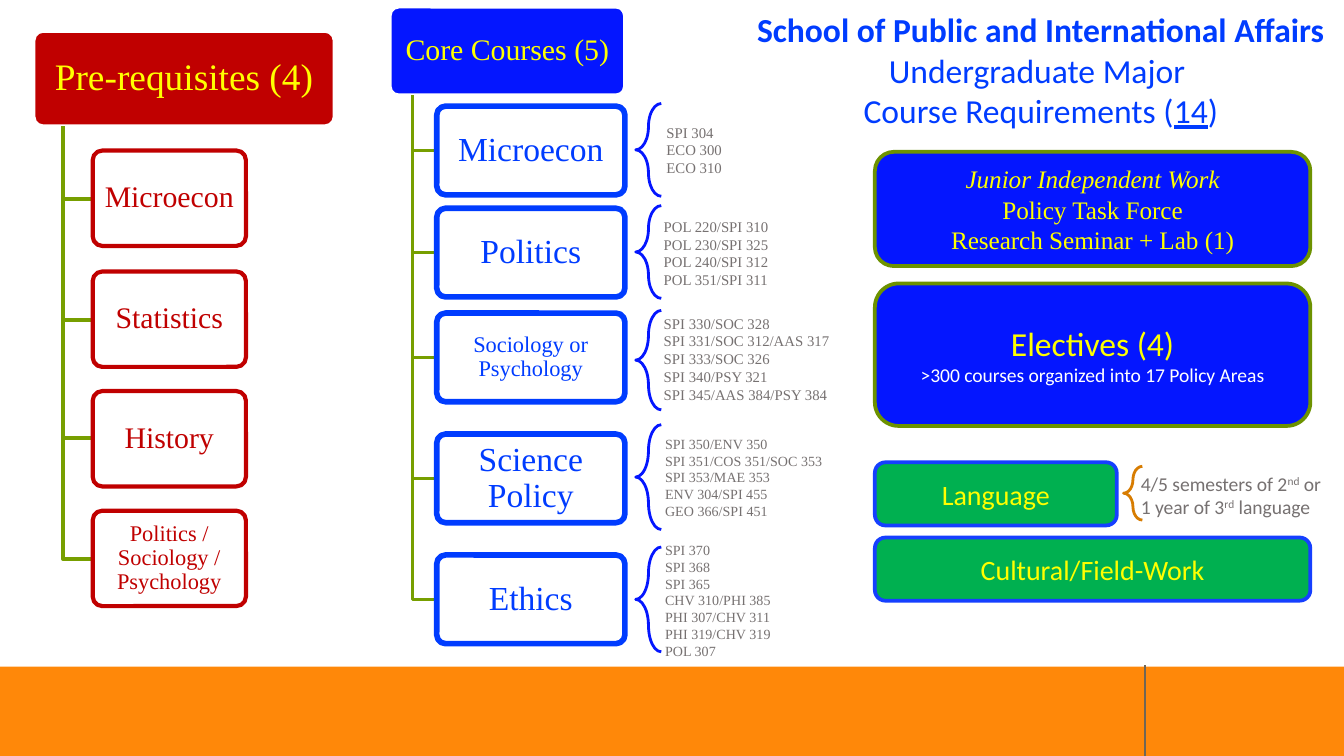
from dataclasses import dataclass
from typing import Optional, Sequence, Union

from pptx import Presentation
from pptx.dml.color import RGBColor
from pptx.enum.shapes import MSO_CONNECTOR, MSO_SHAPE
from pptx.enum.text import MSO_ANCHOR, PP_ALIGN
from pptx.oxml.ns import qn
from pptx.util import Pt
from lxml.etree import SubElement

PX = 9144  # 100 px to the inch
SLIDE_W = 1000 * PX
SLIDE_H = SLIDE_W * 9 // 16
SERIF, SANS = "Times New Roman", "Calibri"
WHITE = RGBColor(0xFF, 0xFF, 0xFF)
YELLOW = RGBColor(0xFF, 0xFF, 0x00)
RED = RGBColor(0xC0, 0x00, 0x00)
BLUE = RGBColor(0x04, 0x16, 0xFF)
COBALT = RGBColor(0x00, 0x3C, 0xFF)
EDGE_BLUE = RGBColor(0x15, 0x3F, 0xFF)
GREEN = RGBColor(0x00, 0xB0, 0x50)
OLIVE = RGBColor(0x6D, 0x92, 0x00)
BRANCH = RGBColor(0x77, 0x9F, 0x00)
GRAY = RGBColor(0x76, 0x71, 0x71)
ORANGE = RGBColor(0xFF, 0x88, 0x09)
AMBER = RGBColor(0xD7, 0x7C, 0x01)
DIVIDER = RGBColor(0x6F, 0x66, 0x57)


@dataclass(frozen=True)
class Box:
    x: int
    y: int
    w: int
    h: int

    def emu(self) -> tuple:
        return self.x * PX, self.y * PX, self.w * PX, self.h * PX


@dataclass(frozen=True)
class Run:
    text: str
    bold: bool = False
    italic: bool = False
    underline: bool = False
    superscript: bool = False
    size: Optional[float] = None
    color: Optional[RGBColor] = None


Line = Union[str, Run, Sequence[Run]]


@dataclass(frozen=True)
class Node:
    y: int
    text: str
    size: int


@dataclass(frozen=True)
class Tree:
    head: Box
    title: str
    title_size: int
    head_fill: RGBColor
    trunk_x: int
    trunk_y: int
    node_x: int
    node_w: int
    node_h: int
    color: RGBColor
    line_pt: float
    nodes: Sequence[Node]


@dataclass(frozen=True)
class CourseList:
    brace_y: int
    brace_h: int
    box: Box
    size: float
    codes: Sequence[str]


@dataclass(frozen=True)
class Panel:
    box: Box
    fill: RGBColor
    edge: RGBColor
    size: float
    font: str
    lines: Sequence[Line]


TREES = (
    Tree(Box(25, 23, 224, 71), "Pre-requisites (4)", 20, RED, 47, 94, 69, 114, 71, RED, 2.25,
         (Node(112, "Microecon", 16), Node(202, "Statistics", 16), Node(291, "History", 16),
          Node(380, "Politics / Sociology / Psychology", 12))),
    Tree(Box(290, 5, 175, 66), "Core Courses (5)", 16, BLUE, 307, 71, 325, 140, 66, COBALT, 3,
         (Node(79, "Microecon", 18), Node(155, "Politics", 18),
          Node(233, "Sociology or Psychology", 12), Node(323, "Science Policy", 18),
          Node(413, "Ethics", 18))),
)
COURSE_LISTS = (
    CourseList(77, 69, Box(486, 87, 62, 50), 7.9, ("SPI 304", "ECO 300", "ECO 310")),
    CourseList(153, 69, Box(484, 157, 100, 63), 7.9,
               ("POL 220/SPI 310", "POL 230/SPI 325", "POL 240/SPI 312", "POL 351/SPI 311")),
    CourseList(231, 74, Box(484, 229, 145, 76), 7.9,
               ("SPI 330/SOC 328", "SPI 331/SOC 312/AAS 317", "SPI 333/SOC 326",
                "SPI 340/PSY 321", "SPI 345/AAS 384/PSY 384")),
    CourseList(316, 78, Box(485, 319, 137, 73), 7.5,
               ("SPI 350/ENV 350", "SPI 351/COS 351/SOC 353", "SPI 353/MAE 353",
                "ENV 304/SPI 455", "GEO 366/SPI 451")),
    CourseList(407, 78, Box(485, 398, 99, 98), 7.5,
               ("SPI 370", "SPI 368", "SPI 365", "CHV 310/PHI 385", "PHI 307/CHV 311",
                "PHI 319/CHV 319", "POL 307")),
)
PANELS = (
    Panel(Box(651, 113, 324, 85), BLUE, OLIVE, 13.5, SERIF,
          (Run("Junior Independent Work", italic=True), "Policy Task Force",
           "Research Seminar + Lab (1)")),
    Panel(Box(651, 211, 324, 106), BLUE, OLIVE, 18, SANS,
          ("Electives (4)",
           Run(">300 courses organized into 17 Policy Areas", size=10.5, color=WHITE))),
    Panel(Box(651, 344, 180, 47), GREEN, EDGE_BLUE, 15, SANS, ("Language",)),
    Panel(Box(651, 400, 324, 47), GREEN, EDGE_BLUE, 15, SANS, ("Cultural/Field-Work",)),
)
TITLE = (Run("School of Public and International Affairs", bold=True),
         "Undergraduate Major ",
         (Run("Course Requirements ("), Run("14", underline=True), Run(")")))
LANGUAGE_NOTE = (
    (Run("4/5 semesters of 2"), Run("nd", superscript=True), Run(" or")),
    (Run("1 year of 3"), Run("rd", superscript=True), Run(" language")),
)


def write(sp, lines: Sequence[Line], *, size: float, color: RGBColor, font: str = SERIF,
          align=PP_ALIGN.CENTER, anchor=MSO_ANCHOR.MIDDLE, wrap: bool = True,
          spacing: Optional[float] = None, inset: Optional[int] = None) -> None:
    tf = sp.text_frame
    tf.word_wrap = wrap
    tf.vertical_anchor = anchor
    if inset is not None:
        tf.margin_left = tf.margin_right = tf.margin_top = tf.margin_bottom = inset * PX
    for i, line in enumerate(lines):
        p = tf.paragraphs[0] if i == 0 else tf.add_paragraph()
        p.alignment = align
        if spacing:
            p.line_spacing = spacing
        runs = [Run(line)] if isinstance(line, str) else [line] if isinstance(line, Run) else line
        for run in runs:
            r = p.add_run()
            r.text = run.text
            r.font.name = font
            r.font.size = Pt(run.size or size)
            r.font.color.rgb = run.color or color
            r.font.bold, r.font.italic, r.font.underline = run.bold, run.italic, run.underline
            if run.superscript:
                r._r.get_or_add_rPr().set("baseline", "30000")


def style(sp, fill: Optional[RGBColor], edge: Optional[RGBColor], line_pt: float = 2) -> None:
    sp.shadow.inherit = False
    if fill is None:
        sp.fill.background()
    else:
        sp.fill.solid()
        sp.fill.fore_color.rgb = fill
    if edge is None:
        sp.line.fill.background()
    else:
        sp.line.color.rgb = edge
        sp.line.width = Pt(line_pt)


def add_shape(s, kind, box: Box, fill, edge, line_pt: float = 2, adjust: Optional[float] = None):
    sp = s.shapes.add_shape(kind, *box.emu())
    style(sp, fill, edge, line_pt)
    if adjust is not None:
        sp.adjustments[0] = adjust
    return sp


def add_text(s, box: Box, lines: Sequence[Line], **fmt) -> None:
    write(s.shapes.add_textbox(*box.emu()), lines, anchor=MSO_ANCHOR.TOP, wrap=False, **fmt)


def add_brace(s, box: Box, color: RGBColor) -> None:
    add_shape(s, MSO_SHAPE.LEFT_BRACE, box, None, color, 1.5, 1.08)


def add_tree(s, t: Tree) -> None:
    sp = add_shape(s, MSO_SHAPE.ROUNDED_RECTANGLE, t.head, t.head_fill, WHITE, 2, 0.1)
    write(sp, [t.title], size=t.title_size, color=YELLOW, spacing=0.9, inset=3)
    for node in t.nodes:
        mid = node.y + t.node_h / 2
        fb = s.shapes.build_freeform(t.trunk_x, t.trunk_y, scale=PX)
        fb.add_line_segments([(t.trunk_x, mid), (t.node_x, mid)], close=False)
        style(fb.convert_to_shape(), None, BRANCH)
        sp = add_shape(s, MSO_SHAPE.ROUNDED_RECTANGLE, Box(t.node_x, node.y, t.node_w, t.node_h),
                       WHITE, t.color, t.line_pt, 0.1)
        write(sp, [node.text], size=node.size, color=t.color, spacing=0.9, inset=3)


def add_footer(s) -> None:
    add_shape(s, MSO_SHAPE.RECTANGLE, Box(0, 496, 1000, 68), ORANGE, None)
    cx = s.shapes.add_connector(MSO_CONNECTOR.STRAIGHT, 852 * PX, 495 * PX, 852 * PX, SLIDE_H)
    cx.line.color.rgb = DIVIDER
    cx.line.width = Pt(0.75)
    SubElement(cx._element.spPr, qn("a:effectLst"))


def main() -> None:
    prs = Presentation()
    prs.slide_width, prs.slide_height = SLIDE_W, SLIDE_H
    s = prs.slides.add_slide(prs.slide_layouts[6])
    add_footer(s)
    for tree in TREES:
        add_tree(s, tree)
    for c in COURSE_LISTS:
        add_text(s, c.box, c.codes, size=c.size, color=GRAY, align=PP_ALIGN.LEFT)
        add_brace(s, Box(473, c.brace_y, 19, c.brace_h), BLUE)
    for panel in PANELS:
        sp = add_shape(s, MSO_SHAPE.ROUNDED_RECTANGLE, panel.box, panel.fill, panel.edge)
        write(sp, panel.lines, size=panel.size, color=YELLOW, font=panel.font)
    add_text(s, Box(551, 2, 447, 101), TITLE, size=18, color=COBALT, font=SANS)
    add_text(s, Box(839, 346, 161, 45), LANGUAGE_NOTE, size=10.5, color=GRAY, font=SANS,
             align=PP_ALIGN.LEFT)
    add_brace(s, Box(836, 347, 14, 40), AMBER)
    prs.save("out.pptx")


if __name__ == "__main__":
    main()
